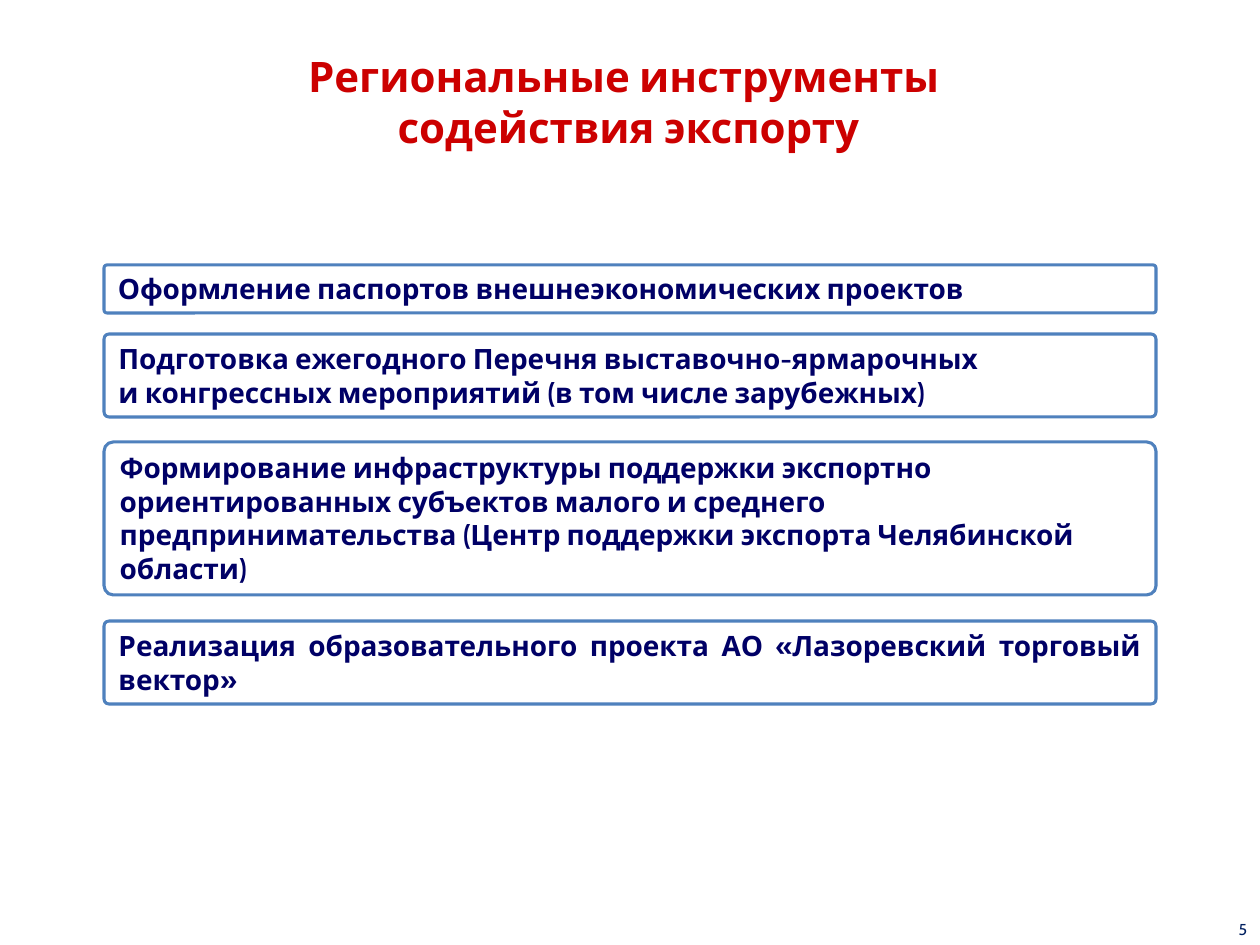
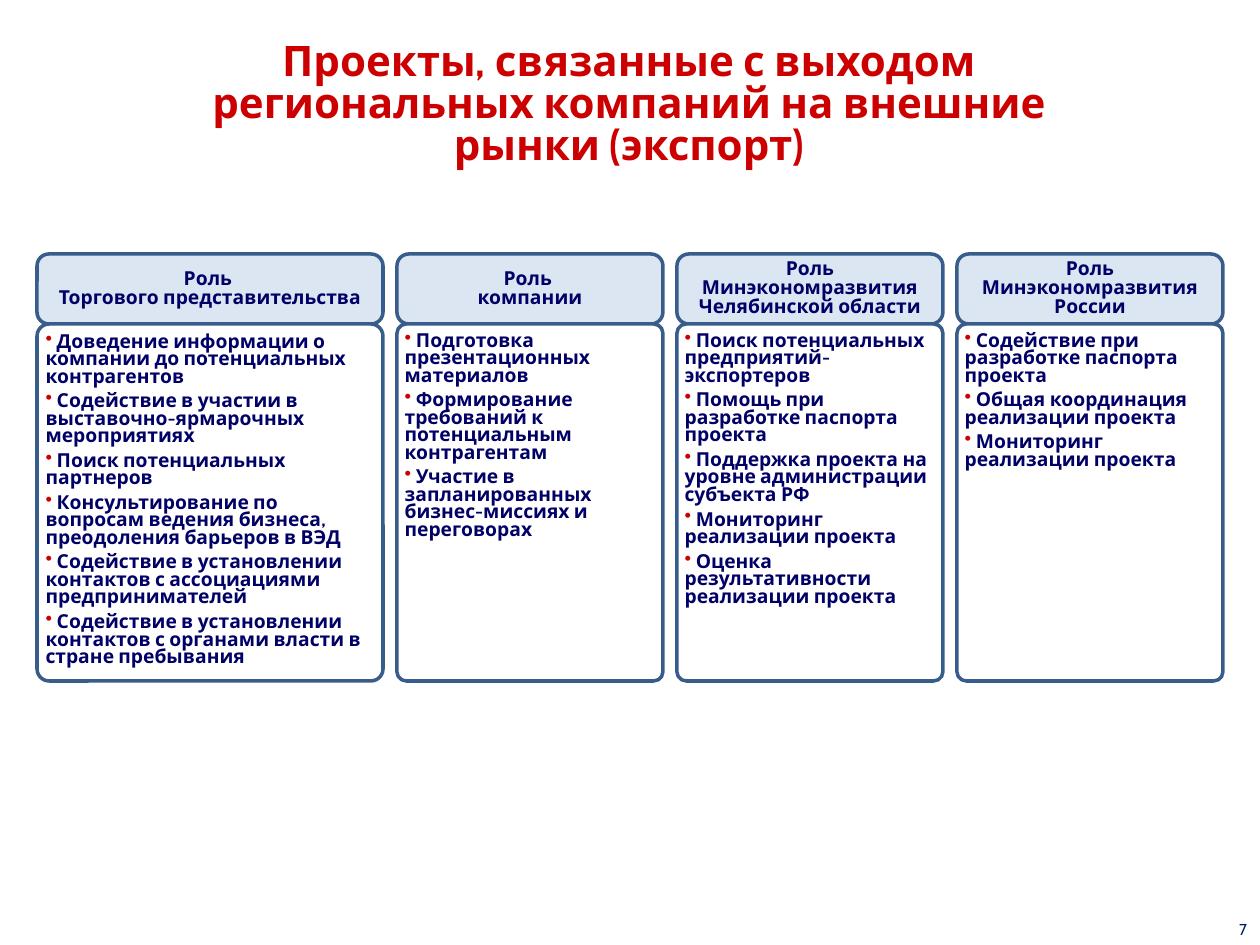
from lxml import etree
from pptx import Presentation
from pptx.dml.color import RGBColor
from pptx.enum.shapes import MSO_SHAPE
from pptx.enum.text import MSO_ANCHOR, PP_ALIGN
from pptx.oxml.ns import qn
from pptx.util import Emu, Pt

ROUND = MSO_SHAPE.ROUNDED_RECTANGLE
TOP, MIDDLE = MSO_ANCHOR.TOP, MSO_ANCHOR.MIDDLE
LEFT, CENTER = PP_ALIGN.LEFT, PP_ALIGN.CENTER
RIGHT, JUSTIFY = PP_ALIGN.RIGHT, PP_ALIGN.JUSTIFY

FONT = "Cabin"
COLORS = {
    "title": "CC0000", "text": "000066", "page": "002060", "bullet": "CC0000",
    "white": "FFFFFF", "head": "DCE6F2", "card": "4F81BD", "edge": "385D8A",
}

# Top, number of text lines, alignment, text
CARDS = [
    (265, 1, JUSTIFY, "Оформление паспортов внешнеэкономических проектов"),
    (334, 2, LEFT, "Подготовка ежегодного Перечня выставочно-ярмарочных \v"
                   "и конгрессных мероприятий (в том числе зарубежных)"),
    (442, 4, LEFT, "Формирование инфраструктуры поддержки экспортно "
                   "ориентированных субъектов малого и среднего "
                   "предпринимательства (Центр поддержки экспорта "
                   "Челябинской области)"),
    (621, 2, JUSTIFY, "Реализация образовательного проекта "
                      "АО «Лазоревский торговый вектор»"),
]

# Width, heading paragraphs, duties
ROLES = [
    (346, ["Роль ", "Торгового представительства"], [
        "Доведение информации о компании до потенциальных контрагентов",
        "Содействие в участии в выставочно-ярмарочных мероприятиях",
        "Поиск потенциальных партнеров",
        "Консультирование по вопросам ведения бизнеса, "
        "преодоления барьеров в ВЭД",
        "Содействие в установлении контактов с ассоциациями предпринимателей",
        "Содействие в установлении контактов с органами власти "
        "в стране пребывания",
    ]),
    (266, ["Роль ", "компании"], [
        "Подготовка презентационных материалов",
        "Формирование требований к потенциальным контрагентам",
        "Участие в запланированных бизнес-миссиях и переговорах",
    ]),
    (266, ["Роль Минэкономразвития Челябинской области"], [
        "Поиск потенциальных предприятий-экспортеров",
        "Помощь при разработке паспорта проекта",
        "Поддержка проекта на уровне администрации субъекта РФ",
        "Мониторинг реализации проекта",
        "Оценка результативности реализации проекта",
    ]),
    (266, ["Роль Минэкономразвития России"], [
        "Содействие при разработке паспорта проекта",
        "Общая координация реализации проекта",
        "Мониторинг реализации проекта",
    ]),
]


def px(n):
    return Emu(int(n * 914400 / 126))


def rgb(name):
    return RGBColor.from_string(COLORS[name])


def add_bullet(para):
    props = para._p.get_or_add_pPr()
    color = etree.SubElement(props, qn("a:buClr"))
    etree.SubElement(color, qn("a:srgbClr")).set("val", COLORS["bullet"])
    etree.SubElement(props, qn("a:buChar")).set("char", "•")


def write(shape, texts, size, color="text", align=LEFT, bold=True, line=None,
          gap=0, bullet=False, pad=(13, 6), anchor=TOP):
    """Fill a shape with paragraphs; gap is the space on each side of one."""
    frame = shape.text_frame
    frame.word_wrap = True
    frame.vertical_anchor = anchor
    frame.margin_left = frame.margin_right = px(pad[0])
    frame.margin_top = frame.margin_bottom = px(pad[1])
    for i, text in enumerate(texts):
        para = frame.add_paragraph() if i else frame.paragraphs[0]
        para.text = " " + text if bullet else text
        para.alignment = align
        if line:
            para.line_spacing = Pt(line)
        para.space_before = Pt(gap if i else 0)
        para.space_after = Pt(gap)
        if bullet:
            add_bullet(para)
        font = para.font
        font.name, font.size, font.bold = FONT, Pt(size), bold
        font.color.rgb = rgb(color)


def add_label(slide, box, text, size, color, **style):
    label = slide.shapes.add_textbox(*map(px, box))
    write(label, [text], size, color, **style)


def add_panel(slide, box, fill, edge, width, round_by):
    panel = slide.shapes.add_shape(ROUND, *map(px, box))
    panel.shadow.inherit = False
    panel.adjustments[0] = round_by
    panel.fill.solid()
    panel.fill.fore_color.rgb = rgb(fill)
    panel.line.color.rgb = rgb(edge)
    panel.line.width = Pt(width)
    return panel


def add_page(deck, title, box, number, line=None):
    """Add a slide with its title and page number."""
    slide = deck.slides.add_slide(deck.slide_layouts[6])
    add_label(slide, box, title, 24, "title", align=CENTER, line=line)
    add_label(slide, (1191, 914, 69, 32), str(number), 9, "page",
              align=RIGHT, bold=False)
    return slide


def add_cards(slide, left, width):
    for top, lines, align, text in CARDS:
        box = (left, top, width, 13 + 35 * lines)
        card = add_panel(slide, box, "white", "card", 1.75, 0.06)
        write(card, [text], 16, align=align)


def add_role(slide, box, heading, duties):
    left, top, width, height = box
    split = 70
    head = add_panel(slide, (left, top, width, split), "head", "edge", 2, 0.17)
    write(head, heading, 11, align=CENTER, line=11, pad=(5, 5), anchor=MIDDLE)
    body = add_panel(slide, (left, top + split, width, height - split),
                     "white", "edge", 2, 0.035)
    write(body, duties, 11, line=10, gap=2, bullet=True, pad=(5, 7))


def add_roles(slide, left, top, height, gap=14):
    for width, heading, duties in ROLES:
        add_role(slide, (left, top, width, height), heading, duties)
        left += width + gap


def main():
    deck = Presentation()
    deck.slide_width, deck.slide_height = px(1260), px(945)

    tools = add_page(deck, "Региональные инструменты \vсодействия экспорту",
                     (142, 45, 973, 115), 5)
    add_cards(tools, 104, 1052)

    export = add_page(deck, "Проекты, связанные с выходом региональных "
                      "компаний на внешние рынки (экспорт)",
                      (134, 37, 990, 140), 7, line=24)
    add_roles(export, 37, 254, 427)

    deck.save("out.pptx")


if __name__ == "__main__":
    main()
